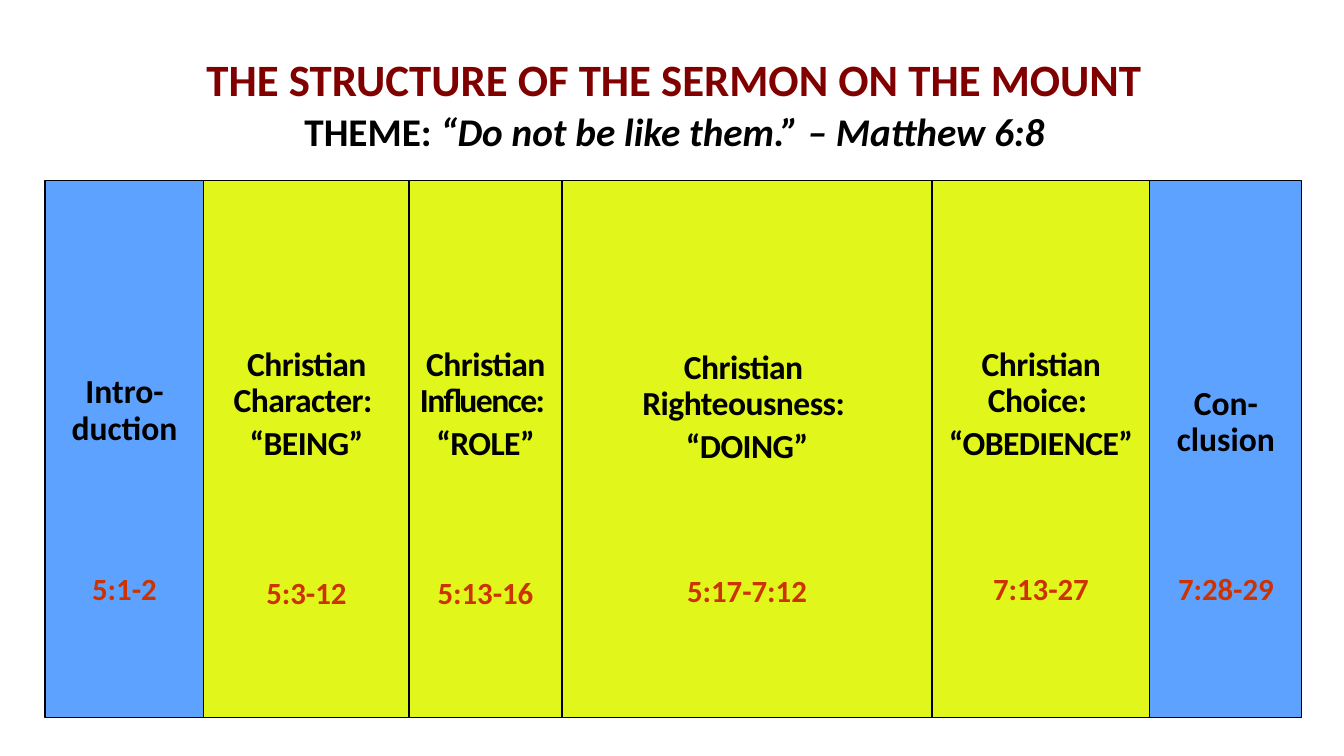
import dataclasses
import itertools

import pptx
import pptx.dml.color
import pptx.enum.shapes
import pptx.enum.text
import pptx.util


@dataclasses.dataclass(frozen=True)
class Theme:
    font: str = "Calibri"
    black: str = "000000"
    maroon: str = "800000"
    red: str = "CC3300"
    blue: str = "5DA2FF"
    yellow: str = "E1F61A"
    title_size: int = 32
    theme_size: int = 28
    heading_size: int = 24
    verse_size: int = 22
    line_width: float = 0.75
    line_spacing: float = 0.9
    tight: int = -40
    tighter: int = -110


def px(count):
    return pptx.util.Emu(round(count * 12192000 / 1344))


def rgb(value):
    return pptx.dml.color.RGBColor.from_string(value)


class Slide:
    def __init__(self, deck, theme):
        self.theme = theme
        self.page = deck.slides.add_slide(deck.slide_layouts[5])

    def frame(self, box, inset_top):
        frame = box.text_frame
        frame.word_wrap = True
        frame.auto_size = pptx.enum.text.MSO_AUTO_SIZE.NONE
        frame.vertical_anchor = pptx.enum.text.MSO_ANCHOR.TOP
        frame.margin_left = frame.margin_right = px(10)
        frame.margin_top, frame.margin_bottom = px(inset_top), px(5)
        return frame

    def para(self, frame, spans, size, color, before=0):
        first = frame.paragraphs[0]
        para = frame.add_paragraph() if first.runs else first
        para.alignment = pptx.enum.text.PP_ALIGN.CENTER
        para.line_spacing = self.theme.line_spacing
        para.space_before = px(before)
        para.font.name = self.theme.font
        para.font.size = pptx.util.Pt(size)
        para.font.bold = True
        para.font.color.rgb = rgb(color)
        for text, spacing in spans:
            span = para.add_run()
            span.text = text
            if spacing:
                span.font._element.set("spc", str(spacing))
        return para

    def title(self, left, top, width, height, heading, label, quote):
        theme = self.theme
        box = self.page.shapes.title
        box.left, box.top, box.width, box.height = map(px, (left, top, width, height))
        frame = self.frame(box, 8)
        self.para(frame, [(heading, 0)], theme.title_size, theme.maroon)
        para = self.para(frame, [(label, 0), (quote, 0)], theme.theme_size, theme.black, 6)
        para.runs[1].font.italic = True

    def column(self, left, right, top, height, fill, inset_top, heading, gap, verse):
        theme = self.theme
        box = self.page.shapes.add_shape(
            pptx.enum.shapes.MSO_SHAPE.RECTANGLE,
            px(left), px(top), px(right - left), px(height))
        box.shadow.inherit = False
        box.fill.solid()
        box.fill.fore_color.rgb = rgb(fill)
        box.line.color.rgb = rgb(theme.black)
        box.line.width = pptx.util.Pt(theme.line_width)
        frame = self.frame(box, inset_top)
        for spans, before in heading:
            self.para(frame, spans, theme.heading_size, theme.black, before)
        self.para(frame, [(verse, 0)], theme.verse_size, theme.red, gap)


def main():
    theme = Theme()
    tight = theme.tight
    deck = pptx.Presentation()
    deck.slide_width, deck.slide_height = px(1344), px(756)
    slide = Slide(deck, theme)
    slide.title(42, 50, 1265, 112, "THE STRUCTURE OF THE SERMON ON THE MOUNT",
                "THEME: ", "“Do not be like them.” – Matthew 6:8")

    edges = [45, 204, 409, 562, 932, 1150, 1302]
    columns = [
        (theme.blue, 194, [([("Intro-duction", 0)], 0)], 126, "5:1-2"),
        (theme.yellow, 166, [([("Christian Character: ", tight)], 0),
                             ([("“BEING”", tight)], 7)], 115, "5:3-12"),
        (theme.yellow, 166, [([("Christian ", tight), ("Influence: ", theme.tighter)], 0),
                             ([("“ROLE”", tight)], 7)], 115, "5:13-16"),
        (theme.yellow, 169, [([("Christian ", tight)], 0),
                             ([("Righteousness: ", tight)], 0),
                             ([("“DOING”", tight)], 7)], 110, "5:17-7:12"),
        (theme.yellow, 166, [([("Christian Choice: ", tight)], 0),
                             ([("“OBEDIENCE”", tight)], 7)], 111, "7:13-27"),
        (theme.blue, 205, [([("Con-clusion", 0)], 0)], 115, "7:28-29"),
    ]
    for (left, right), column in zip(itertools.pairwise(edges), columns):
        slide.column(left, right, 181, 537, *column)
    deck.save("out.pptx")


if __name__ == "__main__":
    main()
